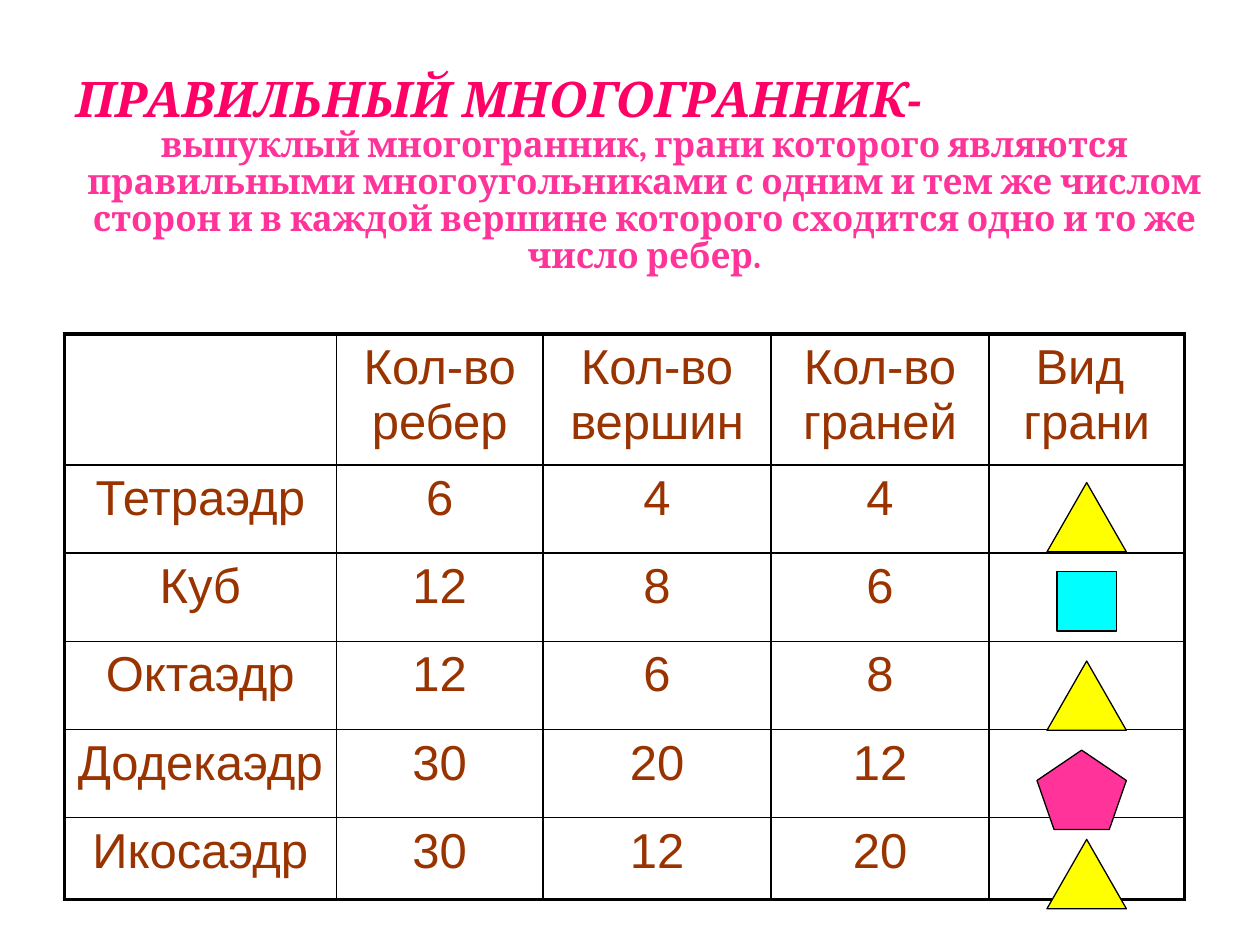
from dataclasses import dataclass

from lxml.etree import SubElement
from pptx import Presentation
from pptx.dml.color import RGBColor
from pptx.enum.shapes import MSO_SHAPE
from pptx.enum.text import MSO_ANCHOR, MSO_AUTO_SIZE, PP_ALIGN
from pptx.oxml.ns import qn
from pptx.slide import Slide
from pptx.util import Inches, Length, Pt

COLUMNS, ROWS = 100, 75  # slide grid with square cells
BLACK, BROWN, PINK = "000000", "993300", "FF3399"
THICK, THIN = 2.21, 0.96

HEADERS = ["", "Кол-во\nребер", "Кол-во\nвершин", "Кол-во\nграней", "Вид \nграни"]
COLUMN_WIDTHS = [21.6, 16.4, 18.1, 17.3, 15.5]
ROW_HEIGHTS = [10.4, 7, 7, 7, 7, 6.5]
FIRST_FACE_TOP, FACE_STEP = 38.3, 7.08


@dataclass(frozen=True)
class Face:
    shape: MSO_SHAPE
    left: float
    width: float
    height: float
    color: str


@dataclass(frozen=True)
class Solid:
    name: str
    edges: int
    vertices: int
    faces: int
    face: Face


TRIANGLE = Face(MSO_SHAPE.ISOSCELES_TRIANGLE, 83.1, 6.3, 5.5, "FFFF00")
SQUARE = Face(MSO_SHAPE.RECTANGLE, 83.9, 4.7, 4.7, "00FFFF")
PENTAGON = Face(MSO_SHAPE.REGULAR_PENTAGON, 82.3, 7.1, 6.3, PINK)

SOLIDS = [
    Solid("Тетраэдр", 6, 4, 4, TRIANGLE),
    Solid("Куб", 12, 8, 6, SQUARE),
    Solid("Октаэдр", 12, 6, 8, TRIANGLE),
    Solid("Додекаэдр", 30, 20, 12, PENTAGON),
    Solid("Икосаэдр", 30, 12, 20, TRIANGLE),
]


def grid(cells: float) -> Length:
    return Inches(cells / 10)


def rgb(color: str) -> RGBColor:
    return RGBColor.from_string(color)


def format_font(font, name: str, size: float, color: str,
                bold: bool = False, italic: bool = False) -> None:
    font.name, font.size, font.bold, font.italic = name, Pt(size), bold, italic
    font.color.rgb = rgb(color)


def fill_title(slide: Slide) -> None:
    title = slide.shapes.title
    title.left, title.top, title.width, title.height = map(grid, (5, 3, 92.3, 21.9))
    frame = title.text_frame
    frame.word_wrap = True
    frame.auto_size = MSO_AUTO_SIZE.NONE
    frame.vertical_anchor = MSO_ANCHOR.MIDDLE
    frame.text = (
        "ПРАВИЛЬНЫЙ МНОГОГРАННИК-\n"
        "выпуклый многогранник, грани которого являются правильными "
        "многоугольниками с одним и тем же числом сторон и в каждой вершине "
        "которого сходится одно и то же число ребер."
    )
    term, definition = frame.paragraphs
    term.alignment, definition.alignment = PP_ALIGN.LEFT, PP_ALIGN.CENTER
    for para in frame.paragraphs:
        para.line_spacing = 0.88
    format_font(term.runs[0].font, "Cambria", 28, "FF0066", bold=True, italic=True)
    format_font(definition.runs[0].font, "Cambria", 20, PINK, bold=True)


def set_border(cell, side: str, width: float) -> None:
    line = SubElement(cell._tc.get_or_add_tcPr(), qn(f"a:ln{side}"), w=str(Pt(width)))
    SubElement(SubElement(line, qn("a:solidFill")), qn("a:srgbClr"), val=BLACK)


def format_cell(cell, text: str, outer_sides: str) -> None:
    """Fill one cell; the sides named in outer_sides get the thick frame."""
    for side in "LRTB":
        set_border(cell, side, THICK if side in outer_sides else THIN)
    cell.fill.background()
    cell.margin_left = cell.margin_right = grid(0.5)
    cell.vertical_anchor = MSO_ANCHOR.TOP
    cell.text_frame.text = text
    for para in cell.text_frame.paragraphs:
        para.alignment = PP_ALIGN.CENTER
        format_font(para.font, "Arial", 28, BROWN)
        for span in para.runs:
            format_font(span.font, "Arial", 28, BROWN)


def add_solids_table(slide: Slide) -> None:
    texts = [HEADERS] + [
        [solid.name, str(solid.edges), str(solid.vertices), str(solid.faces), ""]
        for solid in SOLIDS
    ]
    table = slide.shapes.add_table(
        len(texts), len(HEADERS), grid(5.1), grid(26.5),
        grid(sum(COLUMN_WIDTHS)), grid(sum(ROW_HEIGHTS)),
    ).table
    table.first_row = table.horz_banding = False
    for column, width in zip(table.columns, COLUMN_WIDTHS):
        column.width = grid(width)
    for row, height in zip(table.rows, ROW_HEIGHTS):
        row.height = grid(height)
    last_row, last_column = len(texts) - 1, len(HEADERS) - 1
    for r, row_texts in enumerate(texts):
        for c, text in enumerate(row_texts):
            outer = {"L": c == 0, "R": c == last_column, "T": r == 0, "B": r == last_row}
            sides = "".join(side for side, is_outer in outer.items() if is_outer)
            format_cell(table.cell(r, c), text, sides)


def add_face(slide: Slide, face: Face, top: float) -> None:
    shape = slide.shapes.add_shape(
        face.shape, grid(face.left), grid(top), grid(face.width), grid(face.height))
    shape.shadow.inherit = False
    shape.fill.solid()
    shape.fill.fore_color.rgb = rgb(face.color)
    shape.line.color.rgb = rgb(BLACK)
    shape.line.width = Pt(0.75)


def main() -> None:
    deck = Presentation()
    deck.slide_width, deck.slide_height = grid(COLUMNS), grid(ROWS)
    page = deck.slides.add_slide(deck.slide_layouts[5])
    fill_title(page)
    add_solids_table(page)
    for index, solid in enumerate(SOLIDS):
        add_face(page, solid.face, FIRST_FACE_TOP + index * FACE_STEP)
    deck.save("out.pptx")


if __name__ == "__main__":
    main()
